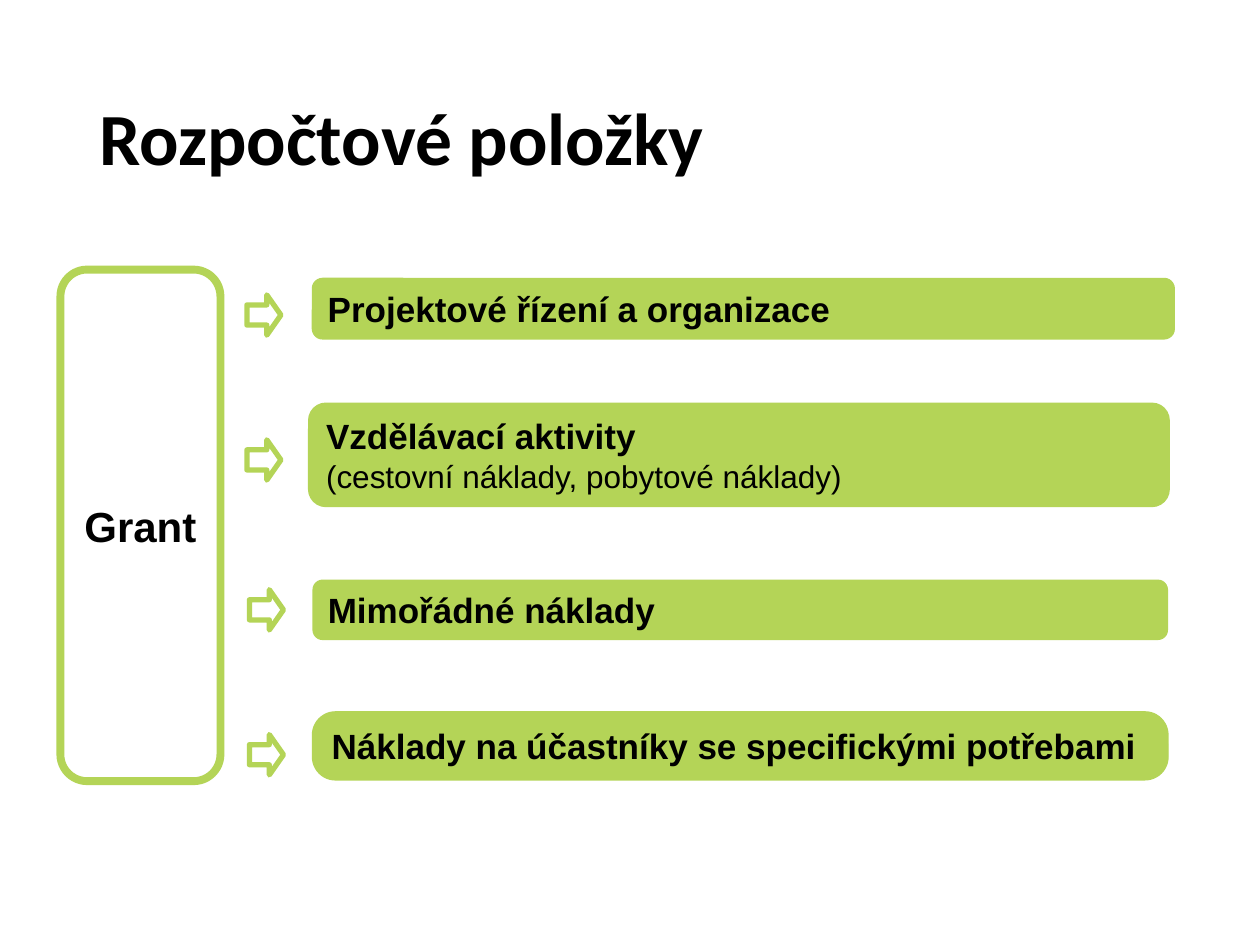
import pptx
import pptx.dml.color
import pptx.enum.shapes
import pptx.enum.text
import pptx.util

Inches = pptx.util.Inches
Pt = pptx.util.Pt
SHAPE = pptx.enum.shapes.MSO_SHAPE
ALIGN = pptx.enum.text.PP_ALIGN
MIDDLE = pptx.enum.text.MSO_ANCHOR.MIDDLE
LIME = pptx.dml.color.RGBColor(0xB4, 0xD4, 0x57)
BLACK = pptx.dml.color.RGBColor(0, 0, 0)


class BudgetSlide:
    """Hold the slide and its style, and draw each kind of element."""

    def __init__(self, slide):
        self.slide = slide

    def add_text(self, paragraph, text, size, bold=True, font="Arial"):
        run = paragraph.add_run()
        run.text = text
        run.font.name = font
        run.font.size = Pt(size)
        run.font.bold = bold
        run.font.color.rgb = BLACK

    def shape(self, kind, box, corners, line_width, filled=False):
        shape = self.slide.shapes.add_shape(kind, *map(Inches, box))
        shape.shadow.inherit = False
        for index, value in enumerate(corners):
            shape.adjustments[index] = value
        if filled:
            shape.fill.solid()
            shape.fill.fore_color.rgb = LIME
        else:
            shape.fill.background()
        if line_width:
            shape.line.color.rgb = LIME
            shape.line.width = Pt(line_width)
        else:
            shape.line.fill.background()
        return shape

    def title(self, text):
        box = map(Inches, (0.69, 0.4, 8.62, 1.45))
        frame = self.slide.shapes.add_textbox(*box).text_frame
        frame.word_wrap = True
        frame.vertical_anchor = MIDDLE
        frame.paragraphs[0].line_spacing = 0.9
        self.add_text(frame.paragraphs[0], text, 42, font="Calibri")

    def grant(self, text):
        frame = self.shape(SHAPE.ROUNDED_RECTANGLE, (0.48, 2.14, 1.27, 4.06), [0.167], 4.5).text_frame
        frame.word_wrap = False
        frame.vertical_anchor = MIDDLE
        frame.paragraphs[0].alignment = ALIGN.CENTER
        self.add_text(frame.paragraphs[0], text, 24)

    def arrow(self, left, top):
        self.shape(SHAPE.RIGHT_ARROW, (left, top, 0.27, 0.32), [0.5, 0.414], 3)

    def item(self, box, corner, line_width, heading, detail=None):
        frame = self.shape(SHAPE.ROUNDED_RECTANGLE, box, [corner], line_width, True).text_frame
        frame.word_wrap = True
        frame.vertical_anchor = MIDDLE
        paragraph = frame.paragraphs[0]
        paragraph.alignment = ALIGN.LEFT
        self.add_text(paragraph, heading, 20)
        if detail:
            paragraph.add_line_break()
            self.add_text(paragraph, detail, 18, bold=False)


def main():
    deck = pptx.Presentation()
    deck.slide_width, deck.slide_height = Inches(10), Inches(7.5)
    budget = BudgetSlide(deck.slides.add_slide(deck.slide_layouts[6]))
    budget.title("Rozpočtové položky")
    budget.grant("Grant")
    budget.item((2.48, 2.21, 6.84, 0.48), 0.167, 0.75, "Projektové řízení a organizace")
    budget.item((2.45, 3.2, 6.83, 0.82), 0.167, 0.75,
                "Vzdělávací aktivity", "(cestovní náklady, pobytové náklady)")
    budget.item((2.48, 4.6, 6.79, 0.48), 0.167, 0, "Mimořádné náklady")
    budget.item((2.48, 5.65, 6.79, 0.54), 0.339, 0.75,
                "Náklady na účastníky se specifickými potřebami")
    for left, top in ((1.96, 2.34), (1.96, 3.49), (1.98, 4.68), (1.98, 5.83)):
        budget.arrow(left, top)
    deck.save("out.pptx")


if __name__ == "__main__":
    main()
